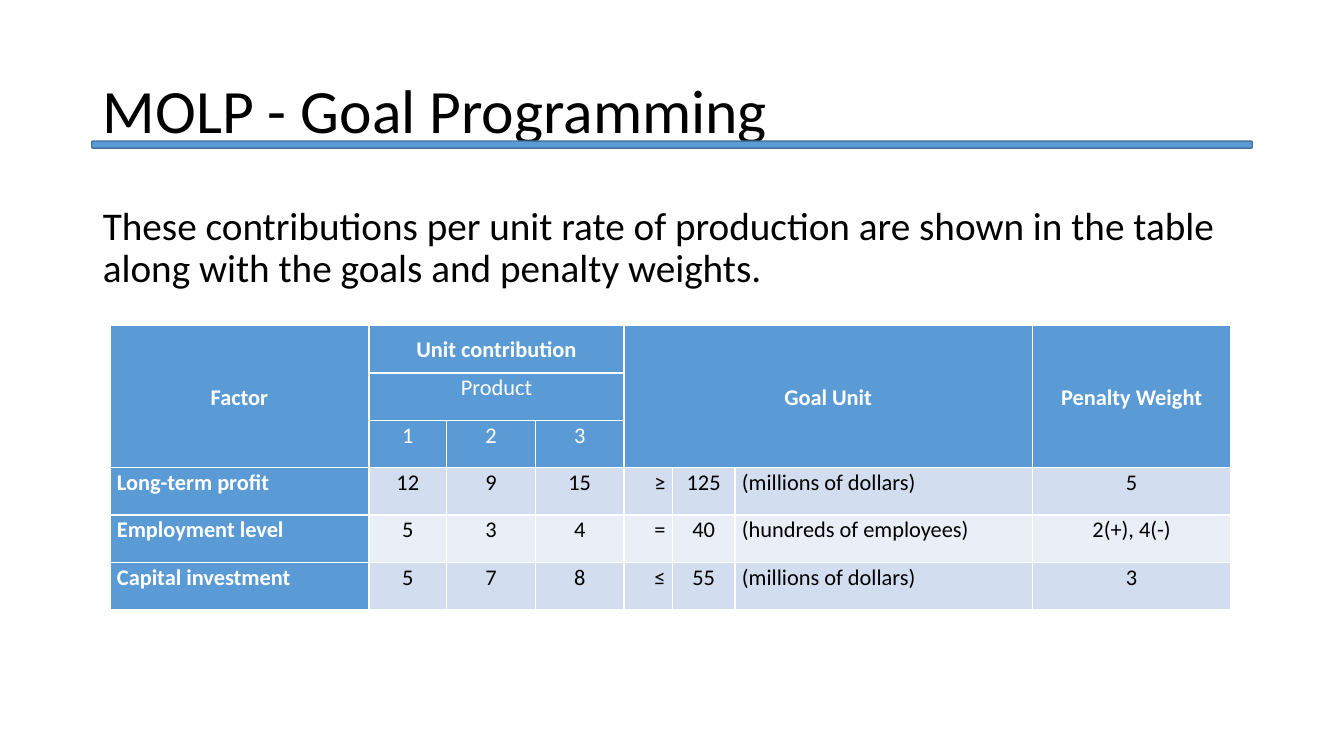
from pptx import Presentation
from pptx.dml.color import RGBColor
from pptx.enum.shapes import MSO_SHAPE as Shape
from pptx.enum.text import MSO_ANCHOR as Anchor, MSO_AUTO_SIZE as AutoSize, PP_ALIGN as Align
from pptx.util import Inches, Pt
from lxml import etree

COLORS = {
    "text": "000000",
    "header": "5B9BD5",
    "header_text": "FFFFFF",
    "rule_edge": "43739E",
    "band_dark": "D2DEEF",
    "band_light": "EAEFF7",
}
FONT = "Calibri"
COLUMN_WIDTHS = [2.57, 0.77, 0.88, 0.88, 0.48, 0.62, 2.95, 1.97]
ROW_HEIGHT = 0.47
COLUMN_ALIGNS = [Align.LEFT, Align.CENTER, Align.CENTER, Align.CENTER,
                 Align.RIGHT, Align.CENTER, Align.LEFT, Align.CENTER]
# row, column, rows spanned, columns spanned, text, bold
HEADERS = [
    (0, 0, 3, 1, "Factor", True),
    (0, 1, 1, 3, "Unit contribution", True),
    (0, 4, 3, 3, "Goal Unit", True),
    (0, 7, 3, 1, "Penalty Weight", True),
    (1, 1, 1, 3, "Product", False),
    (2, 1, 1, 1, "1", False),
    (2, 2, 1, 1, "2", False),
    (2, 3, 1, 1, "3", False),
]
HEADER_ROWS = 3
GOALS = [
    ["Long-term profit", "12", "9", "15", "≥", "125", "(millions of dollars)", "5"],
    ["Employment level", "5", "3", "4", "=", "40", "(hundreds of employees)", "2(+), 4(-)"],
    ["Capital investment", "5", "7", "8", "≤", "55", "(millions of dollars)", "3"],
]


def color(name):
    return RGBColor.from_string(COLORS[name])


def format_para(para, size, color_name, spacing, align=Align.LEFT, bold=False):
    para.alignment = align
    para.line_spacing = spacing
    para.font.name = FONT
    para.font.size = Pt(size)
    para.font.bold = bold
    para.font.color.rgb = color(color_name)


def fill_placeholder(holder, text, box, size, anchor):
    holder.left, holder.top, holder.width, holder.height = map(Inches, box)
    frame = holder.text_frame
    frame.text = text
    frame.auto_size = AutoSize.NONE
    frame.vertical_anchor = anchor
    para = frame.paragraphs[0]
    format_para(para, size, "text", 0.9)
    return para


def remove_bullet(para):
    props = para._p.get_or_add_pPr()
    props.set("marL", "0")
    props.set("indent", "0")
    etree.SubElement(props, props.tag.replace("pPr", "buNone"))


def add_title_rule(page):
    rule = page.shapes.add_shape(Shape.ROUNDED_RECTANGLE, Inches(0.91), Inches(1.4),
                                 Inches(11.51), Inches(0.07))
    rule.shadow.inherit = False
    rule.fill.solid()
    rule.fill.fore_color.rgb = color("header")
    rule.line.color.rgb = color("rule_edge")
    rule.line.width = Pt(1)


def fill_cell(cell, text, fill, text_color, align, bold, anchor=Anchor.TOP):
    cell.margin_left = cell.margin_right = Inches(0.07)
    cell.margin_top = cell.margin_bottom = 0
    cell.vertical_anchor = anchor
    cell.fill.solid()
    cell.fill.fore_color.rgb = color(fill)
    cell.text = text
    format_para(cell.text_frame.paragraphs[0], 16, text_color, 1.06, align, bold)


def add_goal_table(page):
    row_count = HEADER_ROWS + len(GOALS)
    table = page.shapes.add_table(row_count, len(COLUMN_WIDTHS), Inches(1.09), Inches(3.23),
                                  Inches(sum(COLUMN_WIDTHS)),
                                  Inches(ROW_HEIGHT * row_count)).table
    for column, width in zip(table.columns, COLUMN_WIDTHS):
        column.width = Inches(width)
    for row in table.rows:
        row.height = Inches(ROW_HEIGHT)

    for top, left, rows, columns, text, bold in HEADERS:
        cell = table.cell(top, left)
        if rows * columns > 1:
            cell.merge(table.cell(top + rows - 1, left + columns - 1))
        anchor = Anchor.MIDDLE if top == 0 else Anchor.TOP
        fill_cell(cell, text, "header", "header_text", Align.CENTER, bold, anchor)

    for index, goal in enumerate(GOALS):
        band = "band_light" if index % 2 else "band_dark"
        for column, (text, align) in enumerate(zip(goal, COLUMN_ALIGNS)):
            is_factor = column == 0
            fill_cell(table.cell(HEADER_ROWS + index, column), text,
                      "header" if is_factor else band,
                      "header_text" if is_factor else "text", align, is_factor)


def main():
    deck = Presentation()
    deck.slide_width, deck.slide_height = Inches(13.33), Inches(7.5)
    page = deck.slides.add_slide(deck.slide_layouts[1])
    fill_placeholder(page.shapes.title, "MOLP - Goal Programming",
                     (0.92, 0.4, 11.5, 1.45), 44, Anchor.MIDDLE)
    intro = fill_placeholder(
        page.placeholders[1],
        "These contributions per unit rate of production are shown in the table "
        "along with the goals and penalty weights.",
        (0.92, 2, 11.5, 5.33), 28, Anchor.TOP)
    intro.space_before = Pt(10)
    remove_bullet(intro)
    add_title_rule(page)
    add_goal_table(page)
    deck.save("out.pptx")


if __name__ == "__main__":
    main()
